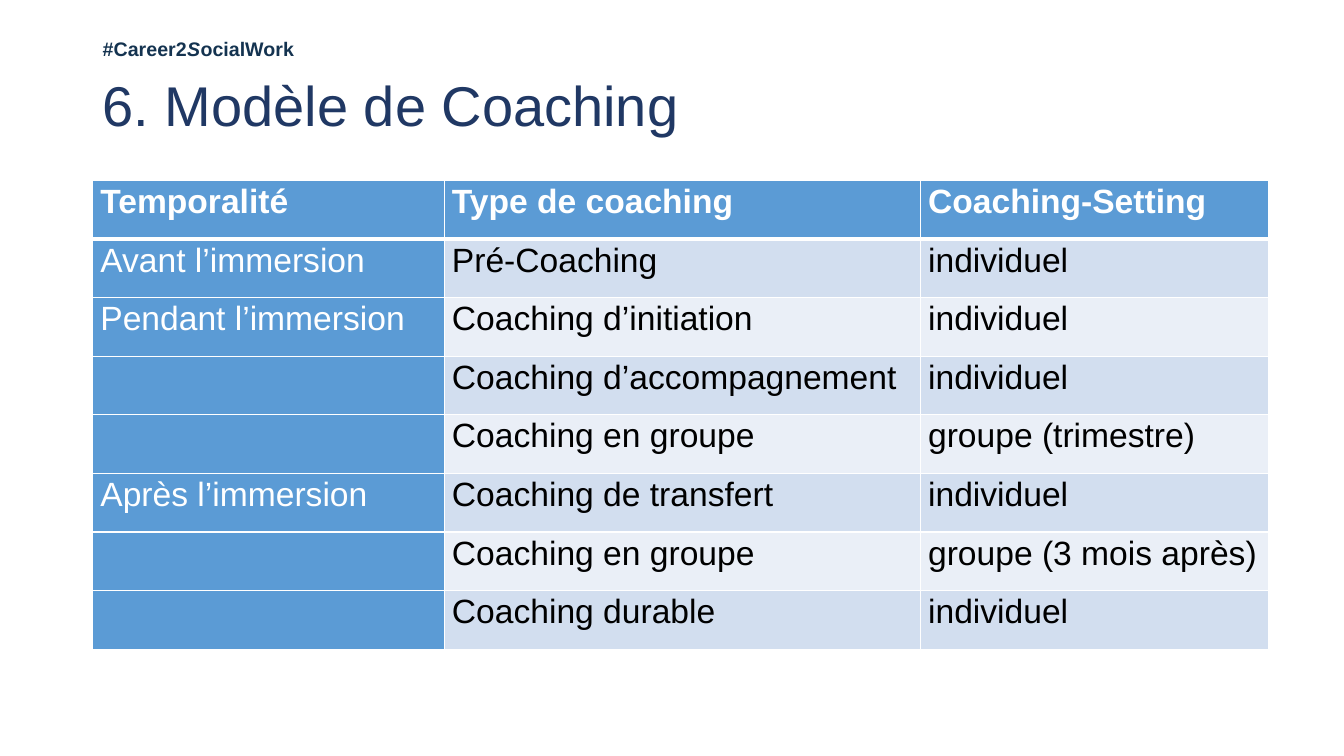
from lxml import etree
from pptx import Presentation
from pptx.dml.color import RGBColor
from pptx.enum.text import MSO_ANCHOR
from pptx.oxml.ns import qn
from pptx.util import Cm, Pt

MIDDLE, BOTTOM = MSO_ANCHOR.MIDDLE, MSO_ANCHOR.BOTTOM
FONT = "Arial"
COLOURS = {
    "tag": "143350",
    "title": "203864",
    "header": "5B9BD5",
    "band_dark": "D2DEEF",
    "band_light": "EAEFF7",
    "white": "FFFFFF",
    "black": "000000",
}
LEFT = 2.34
COLUMN_WIDTHS = [8.86, 12, 8.76]
ROW_HEIGHT = 1.476
ROWS = [
    ["Temporalité", "Type de coaching", "Coaching-Setting"],
    ["Avant l’immersion", "Pré-Coaching", "individuel"],
    ["Pendant l’immersion", "Coaching d’initiation", "individuel"],
    ["", "Coaching d’accompagnement", "individuel"],
    ["", "Coaching en groupe", "groupe (trimestre)"],
    ["Après l’immersion", "Coaching de transfert", "individuel"],
    ["", "Coaching en groupe", "groupe (3 mois après)"],
    ["", "Coaching durable", "individuel"],
]
# Text, italic, letter spacing in hundredths of a point
TAG_SPANS = [("#Career", False, 0), ("2", False, 10),
             ("S", True, 30), ("ocialWork", False, 0)]


def colour(name):
    return RGBColor.from_string(COLOURS[name])


class SlideBuilder:
    def __init__(self, slide):
        self.slide = slide

    def style(self, font, size, colour_name, bold=False):
        font.name = FONT
        font.size = Pt(size)
        font.bold = bold
        font.color.rgb = colour(colour_name)

    def text(self, left, top, width, height, spans, size, colour_name,
             anchor, bold=False, line_spacing=1.0):
        box = self.slide.shapes.add_textbox(Cm(left), Cm(top), Cm(width), Cm(height))
        frame = box.text_frame
        frame.word_wrap = True
        frame.vertical_anchor = anchor
        para = frame.paragraphs[0]
        para.line_spacing = line_spacing
        for text, italic, spacing in spans:
            span = para.add_run()
            span.text = text
            self.style(span.font, size, colour_name, bold)
            span.font.italic = italic
            if spacing:
                span._r.get_or_add_rPr().set("spc", str(spacing))

    def borders(self, cell, top, bottom):
        properties = cell._tc.get_or_add_tcPr()
        for side, width in (("L", 1), ("R", 1), ("T", top), ("B", bottom)):
            line = etree.SubElement(properties, qn(f"a:ln{side}"), w=str(Pt(width)))
            fill = etree.SubElement(line, qn("a:solidFill"))
            etree.SubElement(fill, qn("a:srgbClr"), val=COLOURS["white"])

    def cell(self, cell, text, row, column):
        is_header = row == 0
        is_blue = is_header or column == 0
        self.borders(cell, 3 if row == 1 else 1, 3 if is_header else 1)
        band = "band_dark" if row % 2 else "band_light"
        cell.fill.solid()
        cell.fill.fore_color.rgb = colour("header" if is_blue else band)
        cell.margin_left = cell.margin_right = Cm(0.19)
        cell.margin_top = cell.margin_bottom = 0
        cell.text_frame.text = text
        para = cell.text_frame.paragraphs[0]
        para.line_spacing = 1.07
        for span in para.runs:
            self.style(span.font, 24, "white" if is_blue else "black", is_header)

    def table(self, left, top, widths, row_height, rows):
        frame = self.slide.shapes.add_table(
            len(rows), len(widths), Cm(left), Cm(top),
            Cm(sum(widths)), Cm(row_height * len(rows)))
        table = frame.table
        table.first_col = True
        for column, width in zip(table.columns, widths):
            column.width = Cm(width)
        for row, texts in enumerate(rows):
            table.rows[row].height = Cm(row_height)
            for column, text in enumerate(texts):
                self.cell(table.cell(row, column), text, row, column)


def main():
    deck = Presentation()
    deck.slide_width, deck.slide_height = Cm(33.87), Cm(19.05)
    page = SlideBuilder(deck.slides.add_slide(deck.slide_layouts[6]))

    # Heading
    page.text(LEFT, 0.79, 10.87, 0.86, TAG_SPANS, 14, "tag", BOTTOM, bold=True)
    page.text(LEFT, 1.78, 29.21, 1.9, [("6. Modèle de Coaching", False, 0)],
              40, "title", MIDDLE, line_spacing=0.9)

    # Coaching table
    page.table(LEFT, 4.55, COLUMN_WIDTHS, ROW_HEIGHT, ROWS)

    deck.save("out.pptx")


if __name__ == "__main__":
    main()
